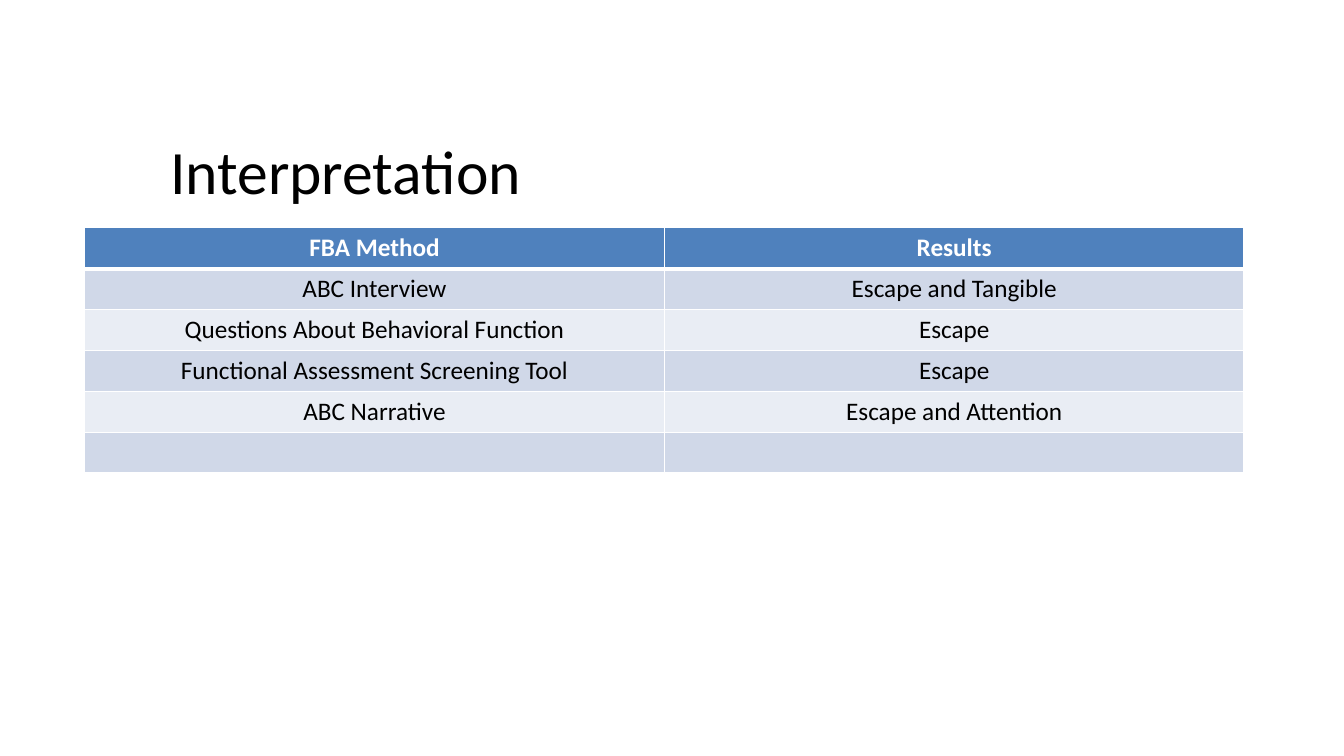
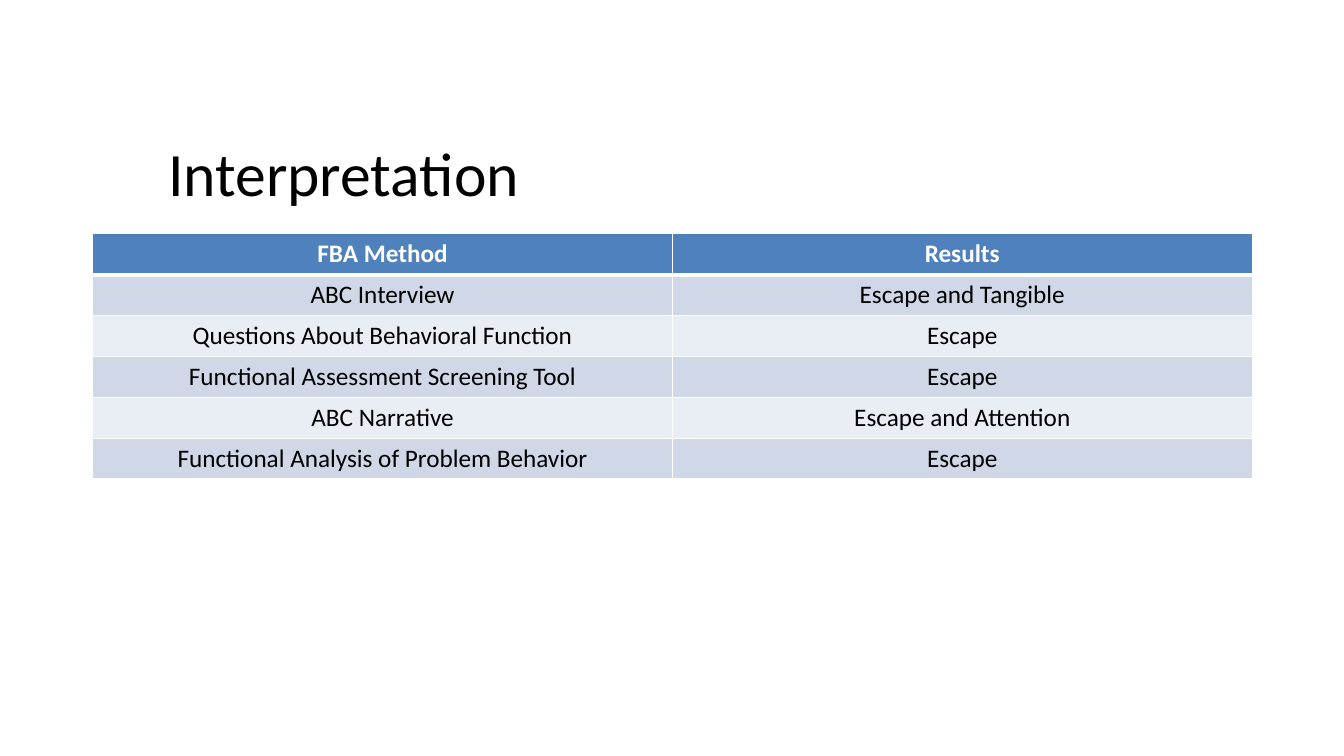
import pptx
import pptx.dml.color
import pptx.enum.text
import pptx.oxml
import pptx.oxml.ns
import pptx.util

FONT = "Calibri"
BLACK, WHITE = "000000", "FFFFFF"
HEADER_FILL = "4F81BD"
BAND_FILLS = ("D0D8E8", "E9EDF4")

HEADER = ("FBA Method", "Results")
FINDINGS = [
    ("ABC Interview", "Escape and Tangible"),
    ("Questions About Behavioral Function", "Escape"),
    ("Functional Assessment Screening Tool", "Escape"),
    ("ABC Narrative", "Escape and Attention"),
]


def color(value):
    return pptx.dml.color.RGBColor.from_string(value)


class Deck:
    """Holds the style and the current slide; lengths are percent of the slide."""

    def __init__(self):
        self.presentation = pptx.Presentation()
        self.presentation.slide_width = pptx.util.Inches(13.33)
        self.presentation.slide_height = pptx.util.Inches(7.5)
        self.slide = None

    def box(self, left, top, width, height):
        across = self.presentation.slide_width / 100
        down = self.presentation.slide_height / 100
        return [round(length) for length in
                (left * across, top * down, width * across, height * down)]

    def add_slide(self):
        layout = self.presentation.slide_layouts.get_by_name("Title Only")
        self.slide = self.presentation.slides.add_slide(layout)

    def centered_text(self, frame, text, size, text_color, bold=False):
        paragraph = frame.paragraphs[0]
        paragraph.alignment = pptx.enum.text.PP_ALIGN.CENTER
        paragraph.font.size = pptx.util.Pt(size)
        if text:
            run = paragraph.add_run()
            run.text = text
            run.font.name = FONT
            run.font.size = pptx.util.Pt(size)
            run.font.bold = bold
            run.font.color.rgb = color(text_color)

    def title(self, text, left, top):
        shape = self.slide.shapes.title
        shape.left, shape.top, shape.width, shape.height = self.box(left, top, 38.86, 12)
        shape.text_frame.word_wrap = True
        shape.text_frame.vertical_anchor = pptx.enum.text.MSO_ANCHOR.MIDDLE
        self.centered_text(shape.text_frame, text, 44, BLACK)

    def border(self, cell, side, points):
        line = pptx.oxml.parse_xml(
            f'<a:ln{side} {pptx.oxml.ns.nsdecls("a")} w="{pptx.util.Pt(points)}">'
            f'<a:solidFill><a:srgbClr val="{WHITE}"/></a:solidFill></a:ln{side}>')
        cell._tc.get_or_add_tcPr().append(line)

    def table(self, rows, left, top, width=86.27, row_height=5.4):
        area = self.box(left, top, width, row_height * len(rows))
        table = self.slide.shapes.add_table(len(rows), len(rows[0]), *area).table
        table.horz_banding = False
        for row_index, row in enumerate(rows):
            is_header = row_index == 0
            fill = HEADER_FILL if is_header else BAND_FILLS[(row_index - 1) % 2]
            for column_index, text in enumerate(row):
                cell = table.cell(row_index, column_index)
                for side in "LRTB":
                    under_header = (row_index, side) in ((0, "B"), (1, "T"))
                    self.border(cell, side, 3 if under_header else 1)
                cell.fill.solid()
                cell.fill.fore_color.rgb = color(fill)
                self.centered_text(cell.text_frame, text, 18,
                                   WHITE if is_header else BLACK, is_header)

    def interpretation(self, last_finding, title_at, table_at):
        self.add_slide()
        self.title("Interpretation", *title_at)
        self.table([HEADER, *FINDINGS, last_finding], *table_at)


def main():
    deck = Deck()
    deck.interpretation(("", ""), title_at=(6.3, 16.53), table_at=(6.3, 30.13))
    deck.interpretation(("Functional Analysis of Problem Behavior", "Escape"),
                        title_at=(6.15, 16.8), table_at=(6.9, 30.93))
    deck.presentation.save("out.pptx")


if __name__ == "__main__":
    main()
